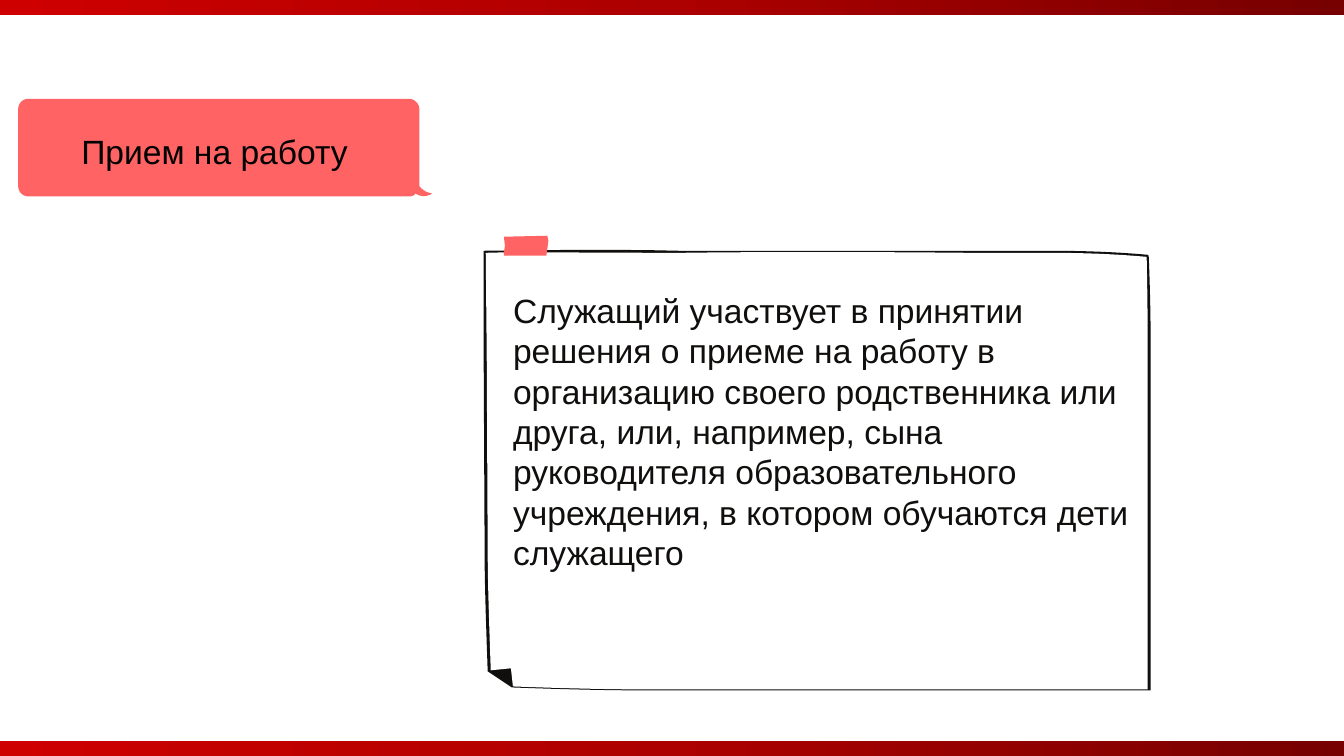
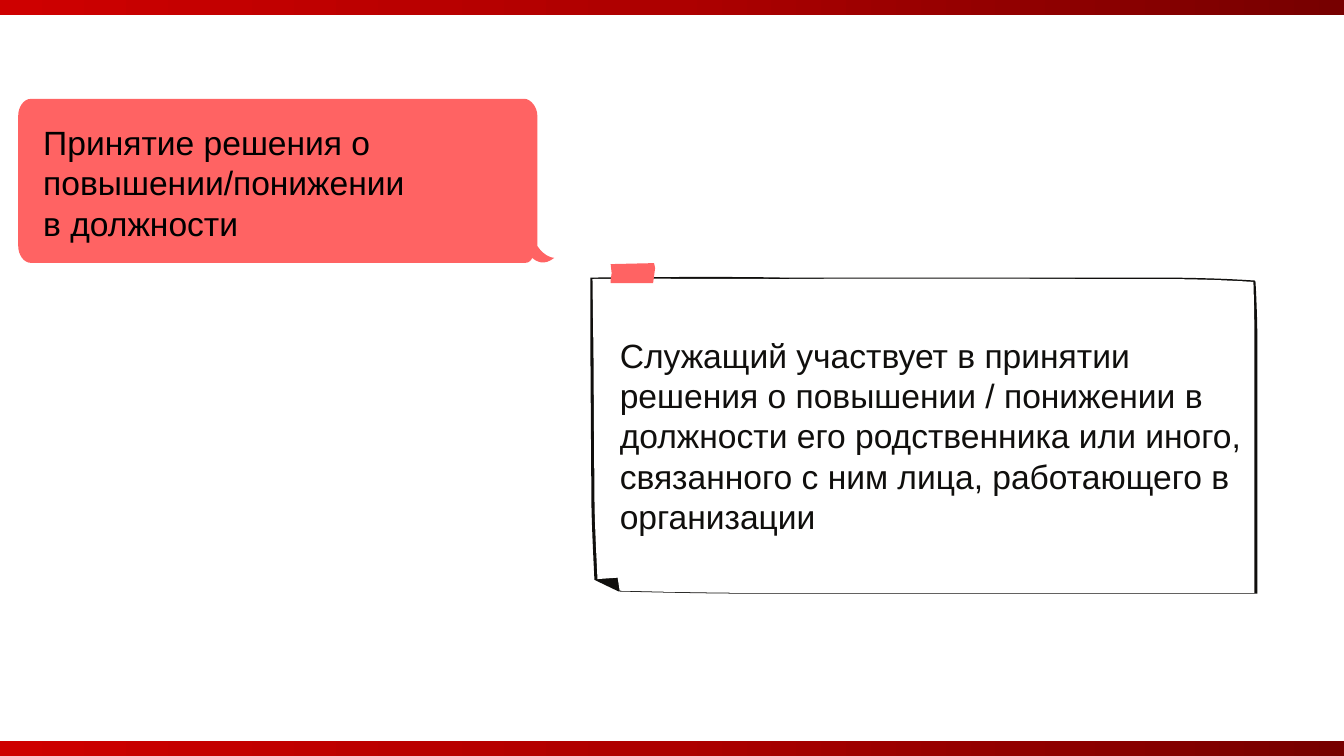
from copy import deepcopy

from pptx import Presentation
from pptx.dml.color import RGBColor
from pptx.enum.shapes import MSO_SHAPE
from pptx.util import Cm, Pt

# Content: frames are left, top, width, height in cm
PAGES = [
    {
        "label": "Прием на работу",
        "bubble": (0.46, 2.49, 10.44, 2.51),
        "label_frame": (1.8, 3.18, 8, 1.27),
        "body": "Служащий участвует в принятии решения о приеме на работу в "
                "организацию своего родственника или друга, или, например, сына "
                "руководителя образовательного учреждения, в котором обучаются "
                "дети служащего",
        "note": (12.19, 6.27, 16.81, 11.13),
        "body_drop": 1.04,
    },
    {
        "label": "Принятие решения о повышении/понижении в должности",
        "bubble": (0.46, 2.49, 13.51, 4.22),
        "label_frame": (0.84, 2.95, 10.24, 3.33),
        "body": "Служащий участвует в принятии решения о повышении / понижении "
                "в должности его родственника или иного, связанного с ним лица, "
                "работающего в организации",
        "note": (14.88, 6.96, 16.81, 8),
        "body_drop": 1.47,
    },
]

# Shared style
WIDTH, HEIGHT, BAND = 33.87, 19.05, 0.38
CORAL, INK, WHITE, BLACK = "FF6363", "100F0D", "FFFFFF", "000000"
BAND_COLOURS = ["CE0000", "AD0000", "770000"]
FONT, SIZE, LEADING = "Arial", Pt(24), Pt(28.8)
TAPE_OFFSET, TAPE_SIZE = (0.51, -0.33), (1.12, 0.53)
BODY_INDENT = 0.74

# Outlines on their own grids: two numbers are a line, six are a curve
BUBBLE_GRID = (411, 99)
BUBBLE = [
    (398, 87), (398, 10), (398, 5, 393, 0, 388, 0), (10, 0),
    (4, 0, 0, 5, 0, 10), (0, 87), (0, 92, 4, 97, 10, 97), (388, 97),
    (391, 97, 393, 96, 394, 94), (397, 96, 403, 99, 411, 94),
    (411, 94, 404, 94, 398, 87),
]
NOTE_GRID = (662, 438)
NOTE_EDGE = [
    (662, 438), (166, 438), (113, 438, 56, 436, 28, 435), (4, 419),
    (3, 390, 1, 334, 1, 308), (0, 107), (0, 2), (2, 2, 125, 0, 194, 2),
    (562, 2), (593, 2, 626, 3, 659, 6), (660, 7),
    (660, 7, 662, 47, 662, 99),
]
NOTE_FACE = [  # leaves the folded corner dark
    (29, 434), (56, 435, 114, 437, 166, 437), (659, 437), (659, 99),
    (659, 51, 658, 13, 658, 8), (625, 5, 593, 4, 562, 4), (485, 4),
    (379, 3, 270, 3, 194, 4), (129, 4, 16, 3, 2, 4), (3, 107), (4, 308),
    (4, 334, 6, 389, 7, 418), (27, 416),
]
TAPE_GRID = (44, 21)
TAPE = [(43, 0), (44, 5), (43, 13), (42, 20), (0, 20), (0, 17), (1, 10), (0, 1)]


def colour(code):
    return RGBColor.from_string(code)


def flatten(outline, steps=8):
    """Turn lines and Bezier curves into a list of points."""
    points = []
    for part in outline:
        if len(part) == 2:
            points.append(part)
            continue
        knots = [points[-1], part[:2], part[2:4], part[4:]]
        for step in range(1, steps + 1):
            t = step / steps
            weights = [(1 - t) ** 3, 3 * t * (1 - t) ** 2, 3 * t * t * (1 - t), t ** 3]
            points.append(tuple(sum(w * knot[axis] for w, knot in zip(weights, knots))
                                for axis in (0, 1)))
    return points


def add_outline(page, outline, grid, frame, fill):
    left, top, width, height = frame
    points = [(Cm(left + x * width / grid[0]), Cm(top + y * height / grid[1]))
              for x, y in flatten(outline)]
    builder = page.shapes.build_freeform(*points[0])
    builder.add_line_segments(points[1:], close=True)
    shape = builder.convert_to_shape()
    shape.shadow.inherit = False
    shape.fill.solid()
    shape.fill.fore_color.rgb = colour(fill)
    shape.line.fill.background()


def add_text(page, text, frame, ink, inset=True):
    box = page.shapes.add_textbox(*map(Cm, frame))
    text_frame = box.text_frame
    text_frame.word_wrap = True
    if not inset:
        text_frame.margin_left = text_frame.margin_right = 0
        text_frame.margin_top = text_frame.margin_bottom = 0
    para = text_frame.paragraphs[0]
    para.text = text
    para.line_spacing = LEADING
    para.font.name, para.font.size = FONT, SIZE
    para.font.color.rgb = colour(ink)


def add_band(page, top):
    band = page.shapes.add_shape(MSO_SHAPE.RECTANGLE, 0, Cm(top), Cm(WIDTH), Cm(BAND))
    band.shadow.inherit = False
    band.line.fill.background()
    band.fill.gradient()
    band.fill.gradient_angle = 0
    # A third stop goes between the two default ones
    first = band.fill.gradient_stops[0]
    stop_list = band._element.spPr.xpath("./a:gradFill/a:gsLst")[0]
    first.color.rgb = colour(BAND_COLOURS[0])
    stop_list.insert(1, deepcopy(stop_list[0]))
    for index, (stop, code) in enumerate(zip(band.fill.gradient_stops, BAND_COLOURS)):
        stop.position = index / 2
        stop.color.rgb = colour(code)


def add_note(page, content):
    left, top, width, height = content["note"]
    add_outline(page, NOTE_EDGE, NOTE_GRID, content["note"], INK)
    add_outline(page, NOTE_FACE, NOTE_GRID, content["note"], WHITE)
    tape_frame = (left + TAPE_OFFSET[0], top + TAPE_OFFSET[1], *TAPE_SIZE)
    add_outline(page, TAPE, TAPE_GRID, tape_frame, CORAL)
    drop = content["body_drop"]
    body_frame = (left + BODY_INDENT, top + drop, width - BODY_INDENT, height - 2 * drop)
    add_text(page, content["body"], body_frame, INK, inset=False)


def main():
    deck = Presentation()
    deck.slide_width, deck.slide_height = Cm(WIDTH), Cm(HEIGHT)
    for content in PAGES:
        page = deck.slides.add_slide(deck.slide_layouts[6])
        # Speech bubble with its label
        add_outline(page, BUBBLE, BUBBLE_GRID, content["bubble"], CORAL)
        add_text(page, content["label"], content["label_frame"], BLACK)
        add_note(page, content)
        for top in (HEIGHT - BAND, 0):
            add_band(page, top)
    deck.save("out.pptx")


if __name__ == "__main__":
    main()
